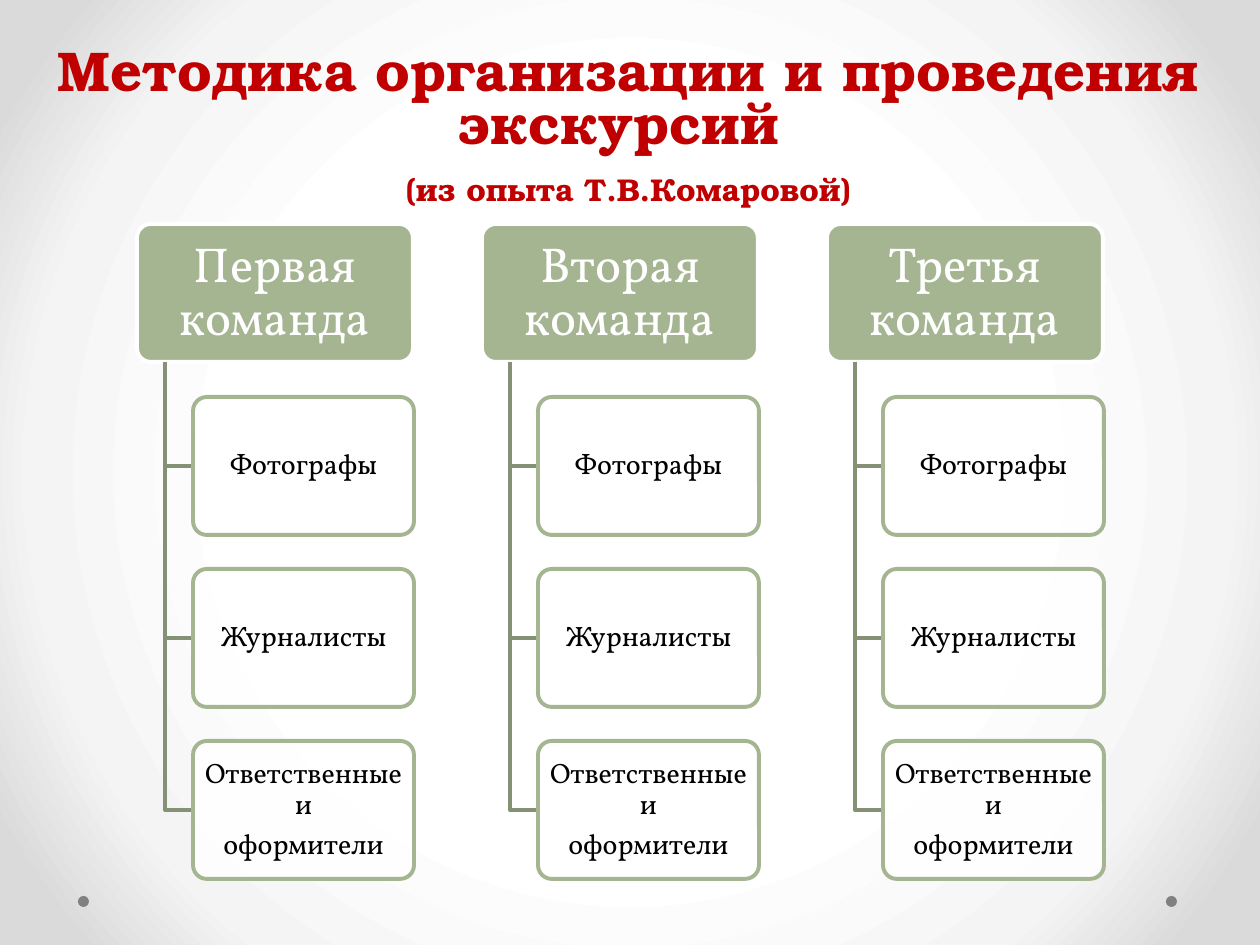
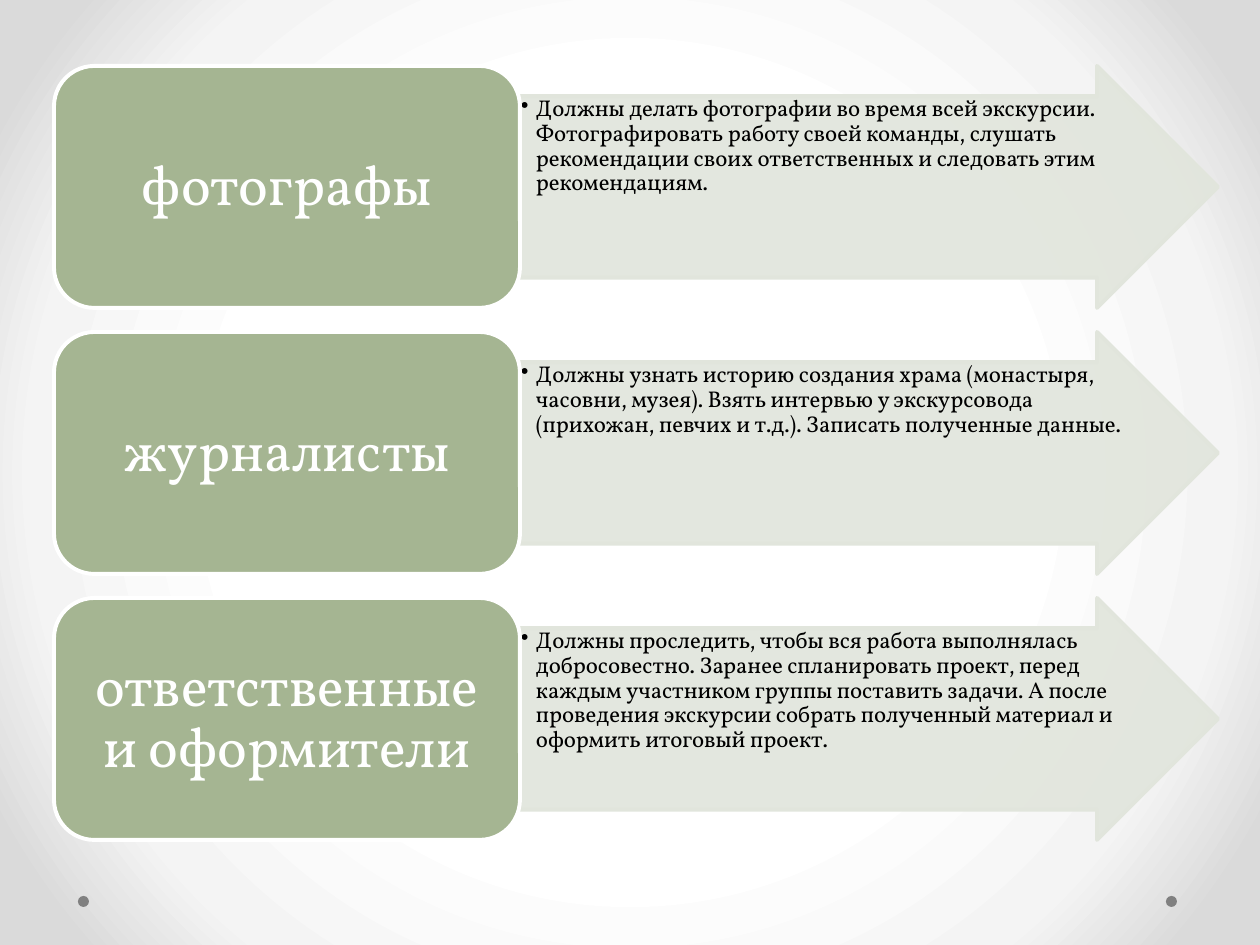
from lxml import etree
from pptx import Presentation
from pptx.dml.color import RGBColor
from pptx.enum.shapes import MSO_SHAPE
from pptx.enum.text import MSO_ANCHOR, PP_ALIGN
from pptx.oxml.ns import qn
from pptx.util import Inches, Pt

ROUNDED, ARROW, DOT = MSO_SHAPE.ROUNDED_RECTANGLE, MSO_SHAPE.RIGHT_ARROW, MSO_SHAPE.OVAL
TOP, MIDDLE, BOTTOM = MSO_ANCHOR.TOP, MSO_ANCHOR.MIDDLE, MSO_ANCHOR.BOTTOM
LEFT, CENTER = PP_ALIGN.LEFT, PP_ALIGN.CENTER

PX = 7257  # EMU per pixel at 126 pixels to the inch
color = RGBColor.from_string
TITLE_FONT, BODY_FONT = "TeX Gyre Bonum", "Vollkorn"
RED, GREEN, DARK_GREEN, PALE_GREEN = "C00000", "A5B592", "849175", "E1E5DC"
WHITE, BLACK, GRAY = "FFFFFF", "000000", "808080"
BACKDROP = [(50, WHITE), (76, "F4F4F4"), (92, "DADADA")]
LINE_WIDTH = Pt(2.25)


def add_block(slide, preset, box, fill, line=None, adjustments=(), opacity=100):
    """Add a flat preset shape; box is left, top, width, height in px."""
    block = slide.shapes.add_shape(preset, *(n * PX for n in box))
    block.shadow.inherit = False
    for i, value in enumerate(adjustments):
        block.adjustments[i] = value
    block.fill.solid()
    block.fill.fore_color.rgb = color(fill)
    if opacity < 100:
        fill_color = block._element.spPr.find(qn("a:solidFill")).find(qn("a:srgbClr"))
        etree.SubElement(fill_color, qn("a:alpha"), val=str(opacity * 1000))
    if line:
        block.line.color.rgb = color(line)
        block.line.width = LINE_WIDTH
    else:
        block.line.fill.background()
    return block


def write(block, text, size, text_color, insets, anchor=MIDDLE, align=CENTER, after=0.35):
    """Fill a block with text; insets are horizontal and vertical px, after is a share of size."""
    frame = block.text_frame
    frame.word_wrap = True
    frame.vertical_anchor = anchor
    frame.margin_left = frame.margin_right = insets[0] * PX
    frame.margin_top = frame.margin_bottom = insets[1] * PX
    frame.text = text
    for paragraph in frame.paragraphs:
        paragraph.alignment = align
        paragraph.line_spacing = 0.9
        paragraph.space_after = Pt(size * after)
        paragraph.font.name = BODY_FONT
        paragraph.font.size = Pt(size)
        paragraph.font.color.rgb = color(text_color)


prs = Presentation()
prs.slide_width, prs.slide_height = Inches(10), Inches(7.5)

# Shared backdrop: a radial gradient on the master, two dots at the foot of each slide
master = prs.slide_master
master.background.fill.gradient()
gradient = master.element.find(".//" + qn("p:bgPr")).find(qn("a:gradFill"))
for part in list(gradient):
    gradient.remove(part)
stops = etree.SubElement(gradient, qn("a:gsLst"))
for position, shade in BACKDROP:
    stop = etree.SubElement(stops, qn("a:gs"), pos=str(position * 1000))
    etree.SubElement(stop, qn("a:srgbClr"), val=shade)
circle = etree.SubElement(gradient, qn("a:path"), path="circle")
etree.SubElement(circle, qn("a:fillToRect"), l="50000", t="50000", r="50000", b="50000")

teams_slide, duties_slide = [prs.slides.add_slide(prs.slide_layouts[6]) for _ in range(2)]
for slide in (teams_slide, duties_slide):
    for dot_left in (1166, 78):
        add_block(slide, DOT, (dot_left, 896, 11, 11), GRAY)

# Slide 1: three teams with the same roles
heading = teams_slide.shapes.add_textbox(42 * PX, 32 * PX, 1173 * PX, 182 * PX).text_frame
heading.word_wrap = True
heading.vertical_anchor = BOTTOM
title = heading.paragraphs[0]
title.alignment = CENTER
title.line_spacing = Pt(30)
title.font.name = TITLE_FONT
title.font.bold = True
title.font.color.rgb = color(RED)
topic = title.add_run()
topic.text = "Методика организации и проведения экскурсий "
topic.font.size = Pt(32)
title.add_line_break()
credit = title.add_run()
credit.text = "(из опыта Т.В.Комаровой)"
credit.font.size = Pt(18)

TEAMS = ["Первая команда", "Вторая команда", "Третья команда"]
ROLES = ["Фотографы", "Журналисты", "Ответственные и\nоформители"]
TEAM_TOP, BOX_HEIGHT = 224, 138
for column, team in enumerate(TEAMS):
    team_left = 137 + 345 * column
    spine_left, role_left = team_left + 28, team_left + 56
    team_bottom = TEAM_TOP + BOX_HEIGHT
    team_box = add_block(teams_slide, ROUNDED, (team_left, TEAM_TOP, 276, BOX_HEIGHT),
                         GREEN, WHITE, [0.1])
    write(team_box, team, 28, WHITE, (8, 5))
    for row, role in enumerate(ROLES):
        role_top = 397 + 172 * row
        role_middle = role_top + BOX_HEIGHT // 2
        outline = teams_slide.shapes.build_freeform(spine_left, team_bottom, scale=PX)
        outline.add_line_segments([(spine_left, role_middle), (role_left, role_middle)], close=False)
        branch = outline.convert_to_shape()
        branch.shadow.inherit = False
        branch.fill.background()
        branch.line.color.rgb = color(DARK_GREEN)
        branch.line.width = LINE_WIDTH
        role_box = add_block(teams_slide, ROUNDED, (role_left, role_top, 221, BOX_HEIGHT),
                             WHITE, GREEN, [0.1], opacity=90)
        write(role_box, role, 16, BLACK, (4, 3))

# Slide 2: what each role does
DUTIES = [
    ("фотографы",
     "Должны делать фотографии во время всей экскурсии. Фотографировать работу своей команды, "
     "слушать рекомендации своих ответственных и следовать этим рекомендациям."),
    ("журналисты",
     "Должны узнать историю создания храма (монастыря, часовни, музея). Взять интервью у "
     "экскурсовода (прихожан, певчих и т.д.). Записать полученные данные."),
    ("ответственные и оформители",
     "Должны проследить, чтобы вся работа выполнялась добросовестно. Заранее спланировать "
     "проект, перед каждым участником группы поставить задачи. А после проведения экскурсии "
     "собрать полученный материал и оформить итоговый проект."),
]
for row, (role, duty) in enumerate(DUTIES):
    row_top = 66 + 266 * row
    duty_arrow = add_block(duties_slide, ARROW, (520, row_top, 698, 242),
                           PALE_GREEN, PALE_GREEN, [0.75, 0.5], opacity=90)
    write(duty_arrow, duty, 13, BLACK, (1, 1), TOP, LEFT, 0.15)
    bullet_props = duty_arrow.text_frame.paragraphs[0]._p.get_or_add_pPr()
    bullet_props.set("marL", str(15 * PX))
    bullet_props.set("indent", str(-15 * PX))
    bullet = etree.Element(qn("a:buChar"), char="•")
    bullet_props.find(qn("a:defRPr")).addprevious(bullet)
    role_box = add_block(duties_slide, ROUNDED, (54, row_top, 466, 242), GREEN, WHITE)
    write(role_box, role, 32, WHITE, (16, 9))

prs.save("out.pptx")
